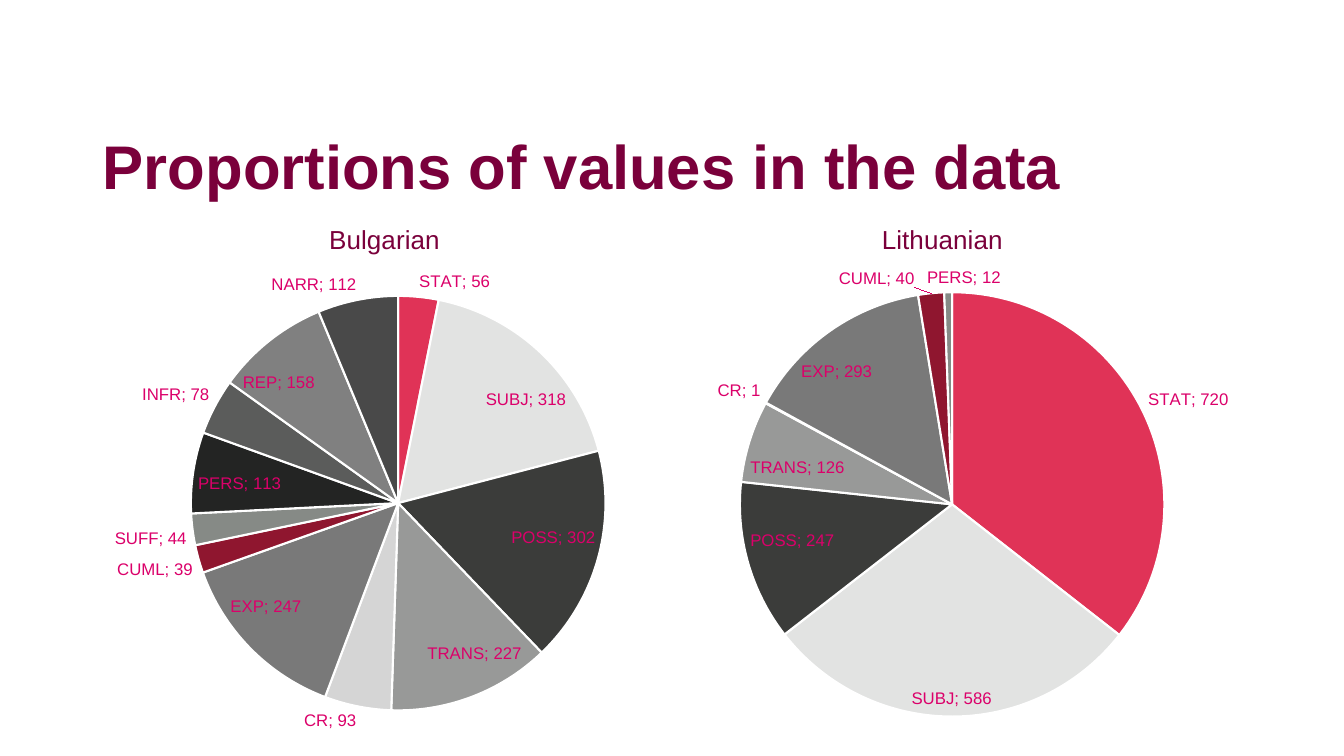
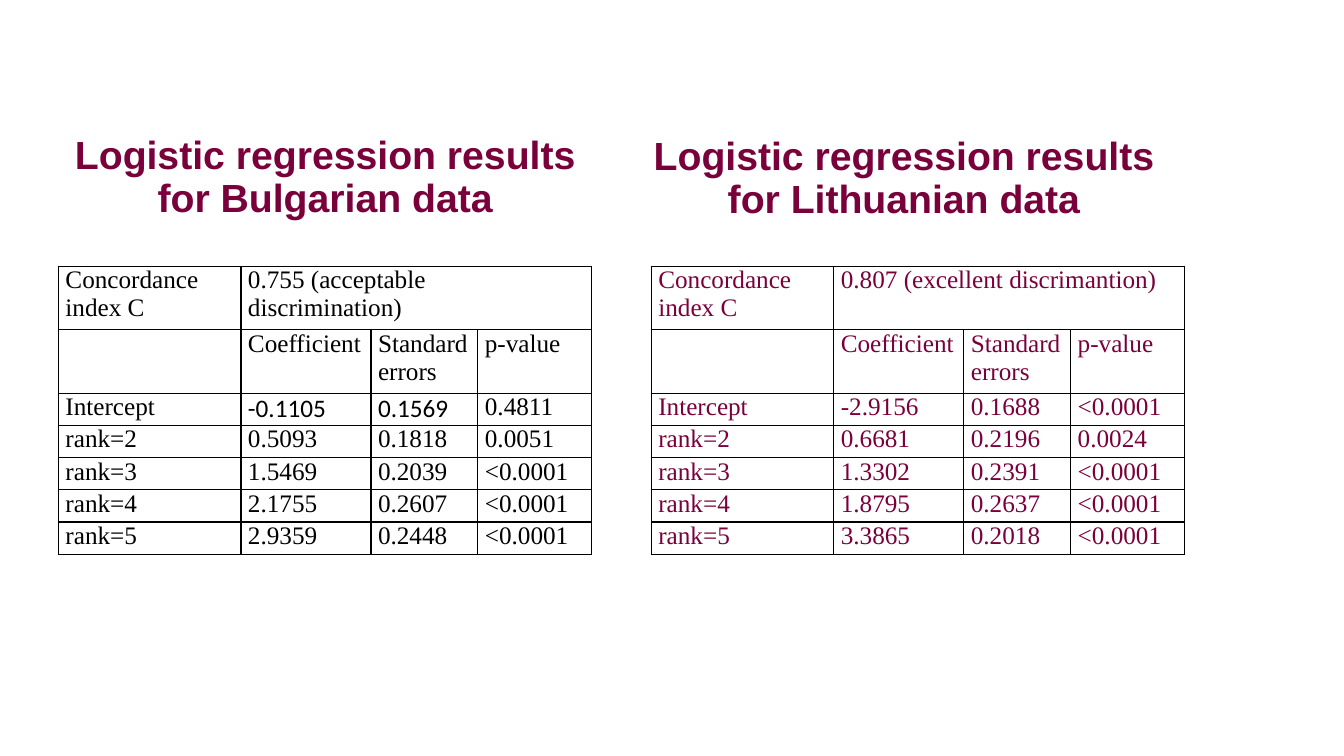
"""Build two slides: value proportions as pies and regression results as tables."""
from lxml import etree
from pptx import Presentation
from pptx.chart.data import CategoryChartData
from pptx.dml.color import RGBColor
from pptx.enum.chart import XL_CHART_TYPE, XL_LABEL_POSITION
from pptx.enum.text import MSO_ANCHOR, MSO_AUTO_SIZE, PP_ALIGN
from pptx.oxml.ns import qn
from pptx.util import Inches, Pt

PIE = XL_CHART_TYPE.PIE
BEST_FIT, OUTSIDE = XL_LABEL_POSITION.BEST_FIT, XL_LABEL_POSITION.OUTSIDE_END
TOP, NO_FIT = MSO_ANCHOR.TOP, MSO_AUTO_SIZE.NONE
LEFT, CENTER, JUSTIFY = PP_ALIGN.LEFT, PP_ALIGN.CENTER, PP_ALIGN.JUSTIFY

PLUM, PINK, BLACK, WHITE = "7A003B", "DB006A", "000000", "FFFFFF"
SANS, SERIF, PLAIN = "Arial", "Times New Roman", "Calibri"
SLICES = ["E03357", "E2E3E2", "3B3C3A", "989998", "D5D5D5", "797979",
          "8F162F", "868A86", "232423", "5B5C5B", "808080", "494949"]

PIES = [
    {"title": "Bulgarian", "box": (0.29, 1.94, 6.97, 5.45),
     "title_at": (0.42, 0.04), "plot": (0.23, 0.18, 0.59, 0.76), "outside": [],
     "values": {"STAT": 56, "SUBJ": 318, "POSS": 302, "TRANS": 227, "CR": 93,
                "EXP": 247, "CUML": 39, "SUFF": 44, "PERS": 113, "INFR": 78,
                "REP": 158, "NARR": 112}},
    {"title": "Lithuanian", "box": (6.22, 1.94, 6.2, 5.33),
     "title_at": (0.4, 0.04), "plot": (0.18, 0.18, 0.68, 0.79), "outside": [0],
     "values": {"STAT": 720, "SUBJ": 586, "POSS": 247, "TRANS": 126, "CR": 1,
                "EXP": 293, "CUML": 40, "PERS": 12}},
]

COLUMNS = [1.81, 1.29, 1.06, 1.13]
ROWS = [0.63] * 2 + [0.32] * 5
HEADS = ["", "Coefficient", "Standard errors", "p-value"]
TABLES = [
    {"left": 0.58, "color": BLACK, "label_align": JUSTIFY, "index_align": LEFT,
     "index": "0.755 (acceptable discrimination)", "plain": [(2, 1), (2, 2)],
     "rows": [["Intercept", "-0.1105", "0.1569", "0.4811"],
              ["rank=2", "0.5093", "0.1818", "0.0051"],
              ["rank=3", "1.5469", "0.2039", "<0.0001"],
              ["rank=4", "2.1755", "0.2607", "<0.0001"],
              ["rank=5", "2.9359", "0.2448", "<0.0001"]]},
    {"left": 6.46, "color": PLUM, "label_align": LEFT, "index_align": JUSTIFY,
     "index": "0.807 (excellent discrimantion)", "plain": [],
     "rows": [["Intercept", "-2.9156", "0.1688", "<0.0001"],
              ["rank=2", "0.6681", "0.2196", "0.0024"],
              ["rank=3", "1.3302", "0.2391", "<0.0001"],
              ["rank=4", "1.8795", "0.2637", "<0.0001"],
              ["rank=5", "3.3865", "0.2018", "<0.0001"]]},
]


def rgb(value):
    return RGBColor.from_string(value)


def set_font(font, name, size, color, bold=False):
    font.name, font.size, font.bold = name, Pt(size), bold
    font.color.rgb = rgb(color)


def write_heading(sp, text, box, size, align=LEFT):
    sp.left, sp.top, sp.width, sp.height = [Inches(v) for v in box]
    tf = sp.text_frame
    tf.word_wrap, tf.auto_size, tf.vertical_anchor = True, NO_FIT, TOP
    p = tf.paragraphs[0]
    p.alignment, p.line_spacing = align, 0.9
    r = p.add_run()
    r.text = text
    set_font(r.font, SANS, size, PLUM, True)


def set_layout(parent, shares, inner=False):
    layout = parent.find(qn("c:layout"))
    if layout is None:
        layout = etree.Element(qn("c:layout"))
        parent.insert(0, layout)
    manual = etree.SubElement(layout, qn("c:manualLayout"))
    fields = [("layoutTarget", "inner")] if inner else []
    fields += [("xMode", "edge"), ("yMode", "edge")]
    fields += zip("xywh", shares)
    for tag, value in fields:
        etree.SubElement(manual, qn(f"c:{tag}")).set("val", str(value))


def add_pie(s, pie):
    data = CategoryChartData()
    data.categories = list(pie["values"])
    data.add_series("Series 1", list(pie["values"].values()))
    chart = s.shapes.add_chart(PIE, *[Inches(v) for v in pie["box"]], data).chart
    set_font(chart.font, SANS, 10, PLUM)
    chart.has_legend = False
    chart.has_title = True
    r = chart.chart_title.text_frame.paragraphs[0].add_run()
    r.text = pie["title"]
    set_font(r.font, SANS, 18.6, PLUM)
    set_layout(chart.chart_title.element if hasattr(chart.chart_title, "element")
               else chart.element.find(".//" + qn("c:title")), pie["title_at"])
    set_layout(chart.element.find(".//" + qn("c:plotArea")), pie["plot"], True)
    plot = chart.plots[0]
    plot.vary_by_categories = True
    series = plot.series[0]
    for i, color in enumerate(SLICES[:len(pie["values"])]):
        fmt = series.points[i].format
        fmt.fill.solid()
        fmt.fill.fore_color.rgb = rgb(color)
        fmt.line.color.rgb = rgb(WHITE)
        fmt.line.width = Pt(1.5)
    labels = series.data_labels
    labels.show_value = labels.show_category_name = True
    labels.position = BEST_FIT
    set_font(labels.font, SANS, 12, PINK)
    for i in pie["outside"]:
        label = series.points[i].data_label
        set_font(label.font, SANS, 12, PINK)
        label.position = OUTSIDE
    for tag in ("c:dLbl", "c:dLbls"):
        for node in chart.element.iter(qn(tag)):
            node.find(qn("c:showCatName")).set("val", "1")
            node.find(qn("c:showPercent")).set("val", "0")
            separator = etree.Element(qn("c:separator"))
            separator.text = "; "
            node.find(qn("c:showBubbleSize")).addnext(separator)


def set_borders(cell):
    tc_pr = cell._tc.get_or_add_tcPr()
    for i, side in enumerate(("lnL", "lnR", "lnT", "lnB")):
        line = etree.Element(qn(f"a:{side}"), w=str(Pt(1)))
        fill = etree.SubElement(line, qn("a:solidFill"))
        etree.SubElement(fill, qn("a:srgbClr"), val=BLACK)
        tc_pr.insert(i, line)


def add_results(s, spec):
    grid = [["Concordance index C", spec["index"], "", ""], HEADS, *spec["rows"]]
    box = (spec["left"], 2.64, sum(COLUMNS), sum(ROWS))
    table = s.shapes.add_table(len(ROWS), len(COLUMNS),
                               *[Inches(v) for v in box]).table
    table.first_row = table.horz_banding = False
    for column, width in zip(table.columns, COLUMNS):
        column.width = Inches(width)
    for row, height in zip(table.rows, ROWS):
        row.height = Inches(height)
    for i, texts in enumerate(grid):
        for j, text in enumerate(texts):
            cell = table.cell(i, j)
            cell.fill.background()
            set_borders(cell)
            cell.margin_left = cell.margin_right = Inches(0.07)
            cell.margin_top = cell.margin_bottom = 0
            if text:
                p = cell.text_frame.paragraphs[0]
                p.alignment = spec["label_align"] if j == 0 else JUSTIFY
                r = p.add_run()
                r.text = text
                name = PLAIN if (i, j) in spec["plain"] else SERIF
                set_font(r.font, name, 18, spec["color"])
    table.cell(0, 1).text_frame.paragraphs[0].alignment = spec["index_align"]
    table.cell(0, 1).merge(table.cell(0, 3))


def main():
    prs = Presentation()
    prs.slide_width, prs.slide_height = Inches(13.33), Inches(7.5)
    title_only = prs.slide_layouts[5]

    s = prs.slides.add_slide(title_only)
    write_heading(s.shapes.title, "Proportions of values in the data",
                  (0.92, 1.3, 9.9, 1.23), 44)
    for pie in PIES:
        add_pie(s, pie)

    s = prs.slides.add_slide(title_only)
    write_heading(s.shapes.title, "Logistic regression results for Bulgarian data",
                  (0.58, 1.3, 5.29, 1.23), 28, CENTER)
    for spec in TABLES:
        add_results(s, spec)
    write_heading(s.shapes.add_textbox(0, 0, 0, 0),
                  "Logistic regression results for Lithuanian data",
                  (6.32, 1.31, 5.29, 1.23), 28, CENTER)
    prs.save("out.pptx")


if __name__ == "__main__":
    main()
